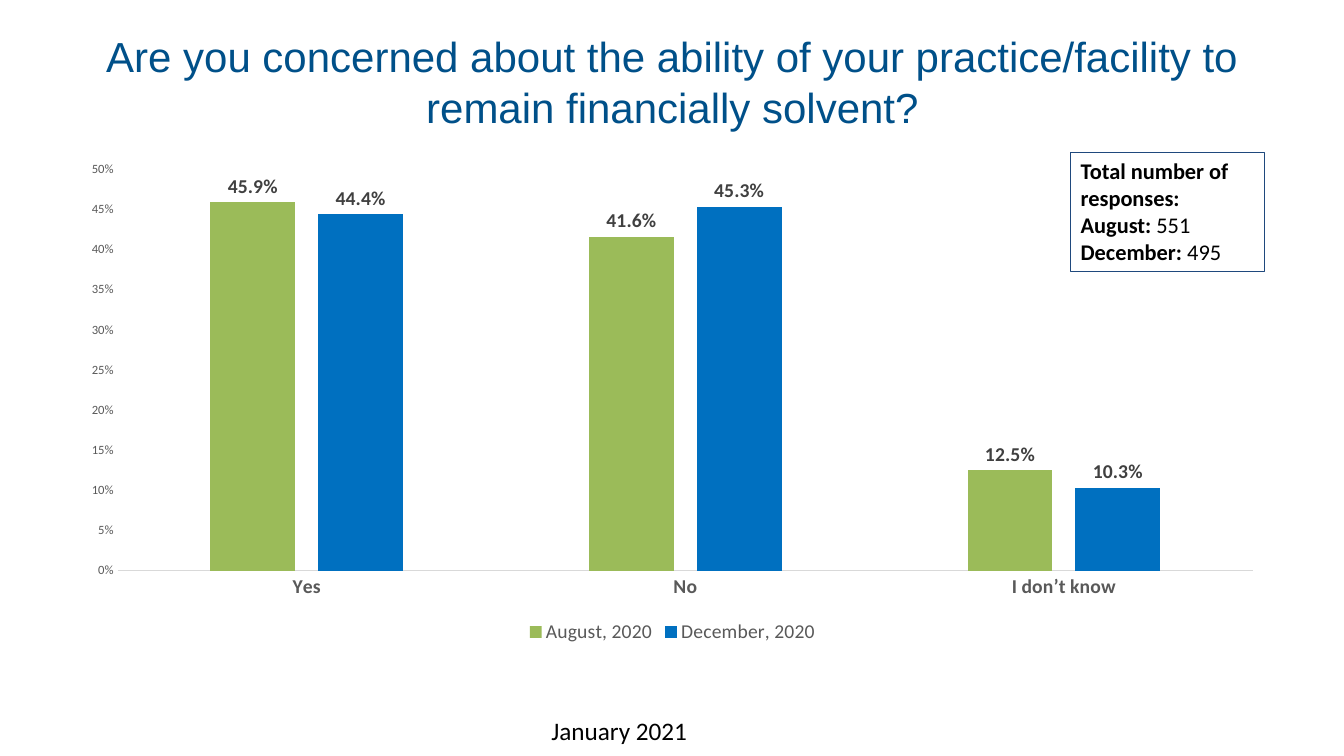
"""Build the slide comparing solvency concerns in August and December 2020."""
from pptx import Presentation
from pptx.chart.data import CategoryChartData
from pptx.dml.color import RGBColor
from pptx.enum.chart import XL_CHART_TYPE as CT, XL_LABEL_POSITION as LP
from pptx.enum.chart import XL_LEGEND_POSITION as LEG, XL_TICK_MARK as TICK
from pptx.enum.shapes import MSO_SHAPE
from pptx.enum.text import MSO_ANCHOR, PP_ALIGN
from pptx.util import Inches, Pt


def rgb(value):
    return RGBColor.from_string(value)


def style(font, size, color, bold=False, name="Calibri"):
    font.name, font.size, font.bold = name, Pt(size), bold
    font.color.rgb = rgb(color)


prs = Presentation()
prs.slide_width, prs.slide_height = Inches(13.33), Inches(7.5)
s = prs.slides.add_slide(prs.slide_layouts[5])
s.background.fill.solid()
s.background.fill.fore_color.rgb = rgb("FFFFFF")

title = s.shapes.title
title.left, title.top = Inches(0.92), Inches(0.08)
title.width, title.height = Inches(11.5), Inches(1.45)
tf = title.text_frame
tf.word_wrap = True
tf.vertical_anchor = MSO_ANCHOR.MIDDLE
p = tf.paragraphs[0]
p.alignment = PP_ALIGN.CENTER
r = p.add_run()
r.text = "Are you concerned about the ability of your practice/facility to remain financially solvent?"
style(r.font, 30, "005089", name="Arial")

series = [
    ("August, 2020", (0.459, 0.416, 0.125), "9BBB59"),
    ("December, 2020", (0.444, 0.453, 0.103), "0070C0"),
]
data = CategoryChartData(number_format="0.0%")
data.categories = ["Yes", "No", "I don’t know"]
for name, values, color in series:
    data.add_series(name, values)
chart = s.shapes.add_chart(CT.COLUMN_CLUSTERED, Inches(0.67), Inches(1.51),
                           Inches(12), Inches(4.92), data).chart
style(chart.font, 10, "000000")
chart.has_title = False
chart.has_legend = True
chart.legend.position = LEG.BOTTOM
chart.legend.include_in_layout = False
style(chart.legend.font, 14, "595959")

plot = chart.plots[0]
plot.vary_by_categories = False
plot.gap_width, plot.overlap = 219, -27
for bars, (name, values, color) in zip(plot.series, series):
    bars.format.fill.solid()
    bars.format.fill.fore_color.rgb = rgb(color)
    labels = bars.data_labels
    labels.show_value = True
    labels.position = LP.OUTSIDE_END
    labels.number_format, labels.number_format_is_linked = "0.0%", False
    style(labels.font, 14, "404040", True)

cat, val = chart.category_axis, chart.value_axis
for axis, size, bold in ((cat, 14, True), (val, 9, False)):
    axis.has_major_gridlines = False
    axis.major_tick_mark = axis.minor_tick_mark = TICK.NONE
    style(axis.tick_labels.font, size, "595959", bold)
cat.format.line.color.rgb = rgb("D9D9D9")
cat.format.line.width = Pt(0.75)
val.format.line.fill.background()
val.minimum_scale, val.maximum_scale, val.major_unit = 0, 0.5, 0.05
val.tick_labels.number_format = "0%"
val.tick_labels.number_format_is_linked = False

box = s.shapes.add_shape(MSO_SHAPE.RECTANGLE, Inches(10.62), Inches(1.51),
                         Inches(1.92), Inches(1.18))
box.shadow.inherit = False
box.fill.background()
box.line.color.rgb = rgb("1F497D")
box.line.width = Pt(0.75)
tf = box.text_frame
tf.word_wrap = True
tf.vertical_anchor = MSO_ANCHOR.TOP
counts = [("Total number of responses:", ""), ("August: ", "551"), ("December: ", "495")]
for i, (label, count) in enumerate(counts):
    p = tf.add_paragraph() if i else tf.paragraphs[0]
    p.alignment = PP_ALIGN.LEFT
    for text, bold in ((label, True), (count, False)):
        if text:
            r = p.add_run()
            r.text = text
            style(r.font, 16, "000000", bold)

date = s.shapes.add_textbox(Inches(5.37), Inches(7.05), Inches(4.22), Inches(0.4))
date.text_frame.word_wrap = True
r = date.text_frame.paragraphs[0].add_run()
r.text = "January 2021"
style(r.font, 18, "000000")

prs.save("out.pptx")
